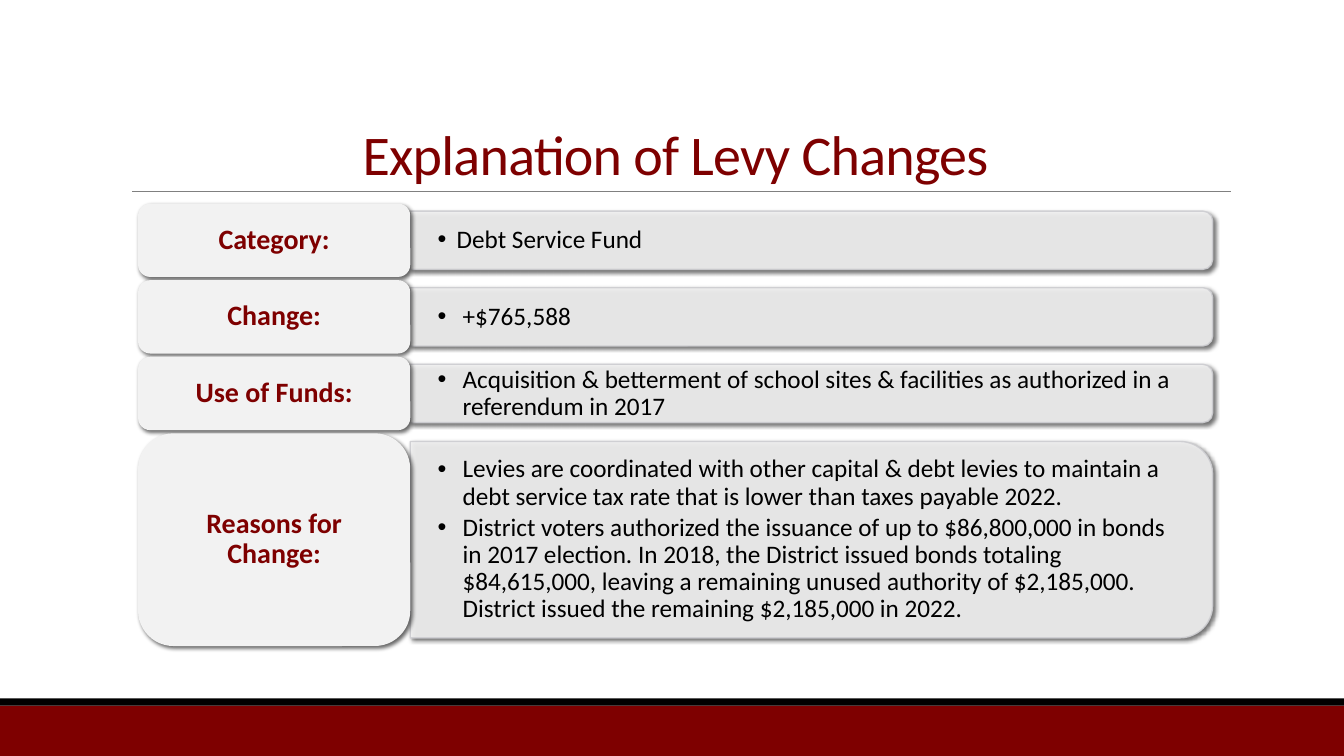
from lxml.etree import SubElement
from pptx import Presentation
from pptx.dml.color import RGBColor
from pptx.enum.shapes import MSO_CONNECTOR as Connector, MSO_SHAPE as Shape
from pptx.enum.text import MSO_ANCHOR as Anchor, PP_ALIGN as Align
from pptx.oxml.ns import qn
from pptx.util import Cm, Pt

MAROON = RGBColor(0x7E, 0x00, 0x00)
BLACK = RGBColor(0x00, 0x00, 0x00)
GREY = RGBColor(0x80, 0x80, 0x80)
PALE = RGBColor(0xF2, 0xF2, 0xF2)
EDGE = RGBColor(0xCD, 0xCD, 0xD1)
FONT = "Calibri"
LABEL_WIDTH = 6.86
ROW_GAP = 0.08

ROWS = [
    ("Category:", ["Debt Service Fund"], 1.85, 1.47, 0.48),
    ("Change:", ["+$765,588"], 1.85, 1.47, 0.63),
    ("Use of Funds:",
     ["Acquisition & betterment of school sites & facilities as authorized in a "
      "referendum in 2017"], 1.85, 1.47, 0.63),
    ("Reasons for Change:",
     ["Levies are coordinated with other capital & debt levies to maintain a debt "
      "service tax rate that is lower than taxes payable 2022.",
      "District voters authorized the issuance of up to $86,800,000 in bonds in 2017 "
      "election. In 2018, the District issued bonds totaling $84,615,000, leaving a "
      "remaining unused authority of $2,185,000. District issued the remaining "
      "$2,185,000 in 2022."], 5.36, 4.95, 0.63),
]


def add_block(slide, kind, left, top, width, height, color):
    """Add a flat, borderless shape with lengths in centimetres."""
    block = slide.shapes.add_shape(kind, Cm(left), Cm(top), Cm(width), Cm(height))
    block.shadow.inherit = False
    block.fill.solid()
    block.fill.fore_color.rgb = color
    block.line.fill.background()
    return block


def add_alpha(color_element, percent):
    """Set the opacity of a colour element."""
    SubElement(color_element, qn("a:alpha")).set("val", str(percent * 1000))


def cast_shadow(block):
    """Give a shape a soft shadow to the lower right."""
    effects = block._element.spPr.find(qn("a:effectLst"))
    shadow = SubElement(effects, qn("a:outerShdw"), blurRad=str(Pt(3)),
                        dist=str(Pt(2)), dir="2700000", rotWithShape="0")
    color = SubElement(shadow, qn("a:srgbClr"), val=str(BLACK))
    add_alpha(color, 60)


def style_paragraph(paragraph, size, color, bold=False, spacing=0.9):
    """Format a paragraph and its runs."""
    paragraph.line_spacing = spacing
    for run in paragraph.runs:
        run.font.name = FONT
        run.font.size = Pt(size)
        run.font.bold = bold
        run.font.color.rgb = color


def add_bullet(paragraph, indent):
    """Give a paragraph a hanging round bullet."""
    properties = paragraph._p.get_or_add_pPr()
    properties.set("marL", str(Cm(indent)))
    properties.set("indent", str(-Cm(indent)))
    SubElement(properties, qn("a:buFont"), typeface="Arial")
    SubElement(properties, qn("a:buChar"), char="•")


def add_heading(slide, left, top, width, height):
    """Place the title and the thin rule under it."""
    title = slide.shapes.title
    title.left, title.top = Cm(left), Cm(top)
    title.width, title.height = Cm(width), Cm(height)
    frame = title.text_frame
    frame.text = "Explanation of Levy Changes"
    frame.vertical_anchor = Anchor.BOTTOM
    heading = frame.paragraphs[0]
    heading.alignment = Align.CENTER
    style_paragraph(heading, 40, MAROON, spacing=0.85)
    heading.runs[0].font._element.set("spc", "-50")
    bottom = Cm(top + height)
    rule = slide.shapes.add_connector(Connector.STRAIGHT, Cm(left + 0.28), bottom,
                                      Cm(left + width + 0.02), bottom)
    rule.line.color.rgb = GREY
    rule.line.width = Pt(0.5)
    SubElement(rule._element.spPr, qn("a:effectLst"))


def add_label(slide, left, top, width, height, caption):
    """Place the rounded caption of a row."""
    label = add_block(slide, Shape.ROUNDED_RECTANGLE, left, top, width, height, PALE)
    cast_shadow(label)
    frame = label.text_frame
    frame.text = caption
    frame.word_wrap = True
    frame.vertical_anchor = Anchor.MIDDLE
    frame.paragraphs[0].alignment = Align.CENTER
    style_paragraph(frame.paragraphs[0], 20, MAROON, bold=True)


def add_panel(slide, left, top, width, height, details, indent):
    """Place the panel of a row, rounded on its right side, with its bullets."""
    panel = add_block(slide, Shape.ROUND_2_SAME_RECTANGLE,
                      left + (width - height) / 2, top + (height - width) / 2,
                      height, width, PALE)
    panel.rotation = 90
    panel.line.color.rgb = EDGE
    panel.line.width = Pt(1)
    for color in panel._element.spPr.findall(".//" + qn("a:srgbClr")):
        add_alpha(color, 90)
    cast_shadow(panel)
    corner = height * 0.05
    body = slide.shapes.add_textbox(Cm(left), Cm(top + corner),
                                    Cm(width - corner), Cm(height - 2 * corner))
    frame = body.text_frame
    frame.text = "\n".join(details)
    frame.word_wrap = True
    frame.vertical_anchor = Anchor.MIDDLE
    frame.margin_left = frame.margin_right = Cm(0.69)
    frame.margin_top = frame.margin_bottom = Cm(0.36)
    for detail in frame.paragraphs:
        style_paragraph(detail, 18, BLACK)
        detail.space_after = Pt(2.7)
        add_bullet(detail, indent)


def add_rows(slide, left, top, width):
    """Stack the rows of captions and panels."""
    for caption, details, height, panel_height, indent in ROWS:
        add_panel(slide, left + LABEL_WIDTH, top + (height - panel_height) / 2,
                  width - LABEL_WIDTH, panel_height, details, indent)
        add_label(slide, left, top, LABEL_WIDTH, height, caption)
        top += height + ROW_GAP


def add_footer(slide, left, top, width, height):
    """Place the maroon band with its black upper edge."""
    edge = 0.18
    add_block(slide, Shape.RECTANGLE, left, top + edge, width, height - edge, MAROON)
    add_block(slide, Shape.RECTANGLE, left, top, width, edge, BLACK)


def main():
    """Build and save the slide."""
    deck = Presentation()
    deck.slide_width, deck.slide_height = Cm(33.87), Cm(19.05)
    slide = deck.slides.add_slide(deck.slide_layouts[5])
    add_footer(slide, 0, 17.6, 33.87, 1.45)
    add_heading(slide, 3.05, 0.79, 27.94, 4.04)
    add_rows(slide, 3.48, 5.13, 27.08)
    deck.save("out.pptx")


if __name__ == "__main__":
    main()
